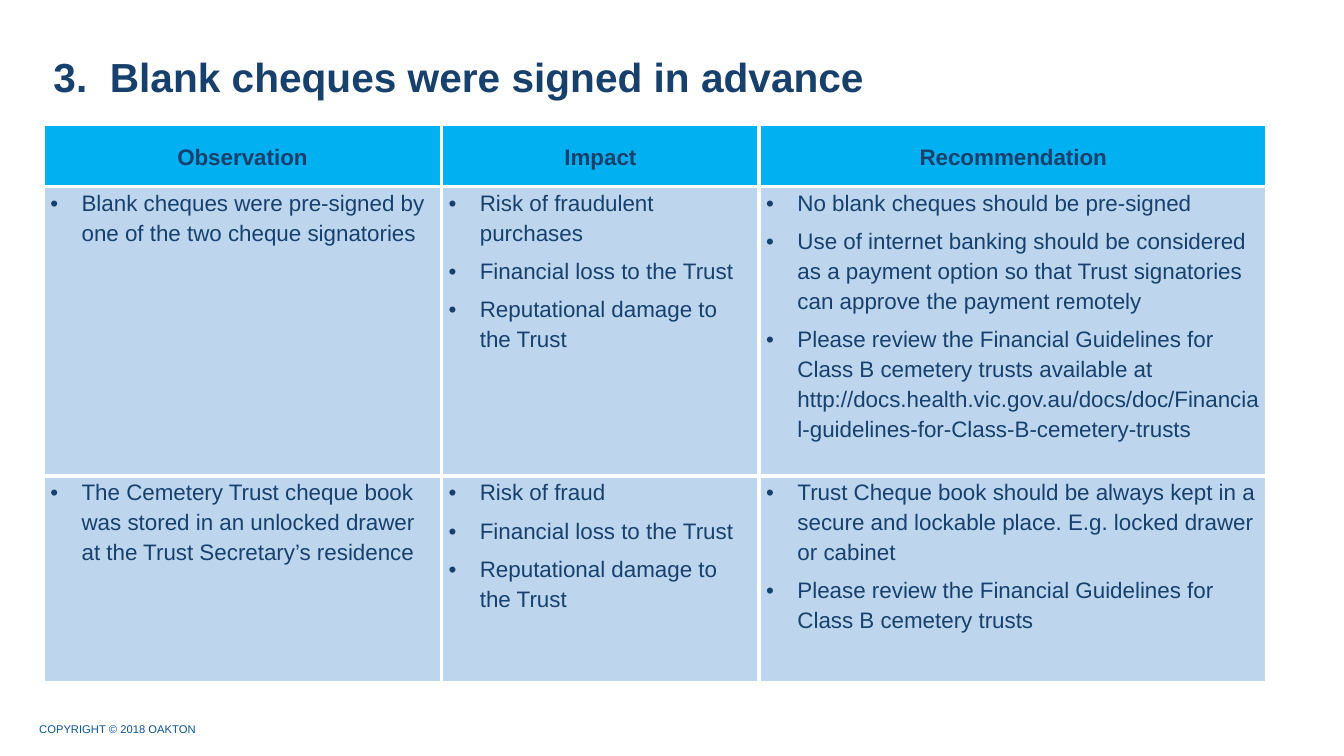
from lxml.etree import SubElement
from pptx import Presentation
from pptx.dml.color import RGBColor
from pptx.enum.text import MSO_ANCHOR, PP_ALIGN
from pptx.oxml import parse_xml
from pptx.oxml.ns import nsdecls, qn
from pptx.util import Inches, Pt

NAVY, HEADER_BLUE, BODY_BLUE = "17406D", "00B0F0", "BDD6EE"
FOOTER_BLUE, WHITE = "0B5394", "FFFFFF"

TITLE, TITLE_NUMBER = "Blank cheques were signed in advance", 3
FOOTER = "COPYRIGHT © 2018 OAKTON"
HEADERS = ["Observation", "Impact", "Recommendation"]
FINDINGS = [
    [
        ["Blank cheques were pre-signed by one of the two cheque signatories"],
        ["Risk of fraudulent purchases",
         "Financial loss to the Trust",
         "Reputational damage to the Trust"],
        ["No blank cheques should be pre-signed",
         "Use of internet banking should be considered as a payment option "
         "so that Trust signatories can approve the payment remotely",
         "Please review the Financial Guidelines for Class B cemetery trusts available at "
         "http://docs.health.vic.gov.au/docs/doc/Financial-guidelines-for-Class-B-cemetery-trusts"],
    ],
    [
        ["The Cemetery Trust cheque book was stored in an unlocked drawer "
         "at the Trust Secretary’s residence"],
        ["Risk of fraud",
         "Financial loss to the Trust",
         "Reputational damage to the Trust"],
        ["Trust Cheque book should be always kept in a secure and lockable place. "
         "E.g. locked drawer or cabinet",
         "Please review the Financial Guidelines for Class B cemetery trusts"],
    ],
]
COL_WIDTHS = [3.95, 3.15, 5.04]
ROW_HEIGHTS = [0.62, 2.87, 2.06]


def rgb(color):
    return RGBColor.from_string(color)


def style_runs(p, size, color, bold=False):
    for r in p.runs:
        r.font.name = "Arial"
        r.font.size = Pt(size)
        r.font.bold = bold
        r.font.color.rgb = rgb(color)


def add_bullet(p, indent, tag, **attrs):
    """Give the paragraph a hanging indent and a bullet or number."""
    pPr = p._p.get_or_add_pPr()
    pPr.set("marL", str(Inches(indent)))
    pPr.set("indent", str(-Inches(indent)))
    if tag == "buChar":
        SubElement(pPr, qn("a:buFont"), typeface="Arial")
    SubElement(pPr, qn(f"a:{tag}"), **attrs)


def set_borders(cell, color, width):
    tcPr = cell._tc.get_or_add_tcPr()
    for i, side in enumerate("LRTB"):
        tcPr.insert(i, parse_xml(
            f'<a:ln{side} {nsdecls("a")} w="{Pt(width)}"><a:solidFill>'
            f'<a:srgbClr val="{color}"/></a:solidFill></a:ln{side}>'))


def fill_cell(cell, lines, header):
    cell.margin_left = cell.margin_right = Inches(0.07)
    cell.margin_top = cell.margin_bottom = 0
    cell.vertical_anchor = MSO_ANCHOR.MIDDLE if header else MSO_ANCHOR.TOP
    cell.fill.solid()
    cell.fill.fore_color.rgb = rgb(HEADER_BLUE if header else BODY_BLUE)
    set_borders(cell, WHITE, 3)
    tf = cell.text_frame
    tf.text = "\n".join(lines)
    for i, p in enumerate(tf.paragraphs):
        if header:
            p.alignment = PP_ALIGN.CENTER
        else:
            add_bullet(p, 0.31, "buChar", char="•")
        p.line_spacing = 1.2
        p.space_before = Pt(3 if i else 0)
        p.space_after = Pt(3)
        style_runs(p, 16, NAVY, bold=header)


def add_title(s):
    title = s.shapes.title
    title.left, title.top = Inches(0.43), Inches(0.25)
    title.width, title.height = Inches(10.72), Inches(0.91)
    tf = title.text_frame
    tf.text = TITLE
    tf.vertical_anchor = MSO_ANCHOR.MIDDLE
    p = tf.paragraphs[0]
    add_bullet(p, 0.56, "buAutoNum", type="arabicPeriod", startAt=str(TITLE_NUMBER))
    p.alignment = PP_ALIGN.LEFT
    p.line_spacing = 1.2
    p.space_before, p.space_after = Pt(0), Pt(2)
    style_runs(p, 29, NAVY, bold=True)


def add_findings(s):
    rows = [[[h] for h in HEADERS]] + FINDINGS
    table = s.shapes.add_table(
        len(rows), len(HEADERS), Inches(0.43), Inches(1.23),
        Inches(sum(COL_WIDTHS)), Inches(sum(ROW_HEIGHTS))).table
    for column, width in zip(table.columns, COL_WIDTHS):
        column.width = Inches(width)
    for row, height, contents in zip(table.rows, ROW_HEIGHTS, rows):
        row.height = Inches(height)
        for cell, lines in zip(row.cells, contents):
            fill_cell(cell, lines, header=contents is rows[0])


def add_footer(s):
    tf = s.shapes.add_textbox(
        Inches(0.29), Inches(7.12), Inches(4.95), Inches(0.24)).text_frame
    tf.word_wrap = True
    tf.text = FOOTER
    style_runs(tf.paragraphs[0], 8, FOOTER_BLUE)


def main():
    prs = Presentation()
    prs.slide_width, prs.slide_height = Inches(13.33), Inches(7.5)
    s = prs.slides.add_slide(prs.slide_layouts[5])
    add_title(s)
    add_findings(s)
    add_footer(s)
    prs.save("out.pptx")


if __name__ == "__main__":
    main()
